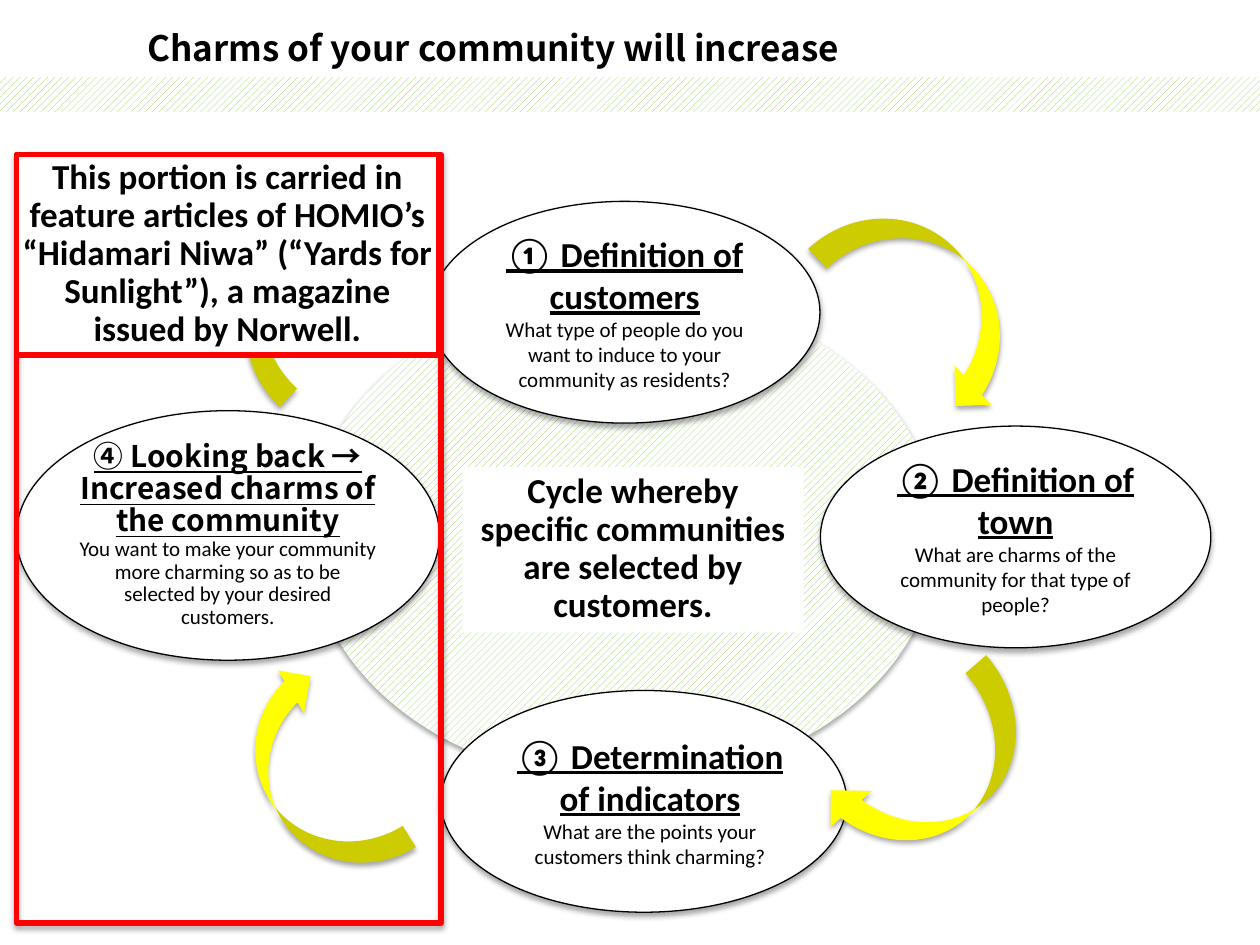
from collections import namedtuple

from lxml import etree
from pptx import Presentation
from pptx.dml.color import RGBColor
from pptx.enum.dml import MSO_PATTERN
from pptx.enum.shapes import MSO_SHAPE
from pptx.enum.text import MSO_ANCHOR, MSO_AUTO_SIZE, PP_ALIGN
from pptx.oxml.ns import qn
from pptx.util import Cm, Pt

ELLIPSE, RECTANGLE = MSO_SHAPE.OVAL, MSO_SHAPE.RECTANGLE
CURVED_ARROW = MSO_SHAPE.CURVED_DOWN_ARROW
DIAGONAL = MSO_PATTERN.WIDE_UPWARD_DIAGONAL
TOP, MIDDLE = MSO_ANCHOR.TOP, MSO_ANCHOR.MIDDLE
LEFT, CENTER = PP_ALIGN.LEFT, PP_ALIGN.CENTER
GROW = MSO_AUTO_SIZE.SHAPE_TO_FIT_TEXT
TITLE_ONLY = 5

LATIN, JAPANESE = "Calibri", "Noto Sans CJK JP"
BLACK, WHITE, RED, YELLOW, GREEN = "000000", "FFFFFF", "FF0000", "FFFF00", "92D050"

Box = namedtuple("Box", "left top width height")
Step = namedtuple("Step", "box heading body font size spacing inset")

# Boxes of the steps and arrows are relative to the cycle, in centimetres.
STEPS = [
    Step(Box(8.89, 9.86, 8.18, 4.47), "③ Determination of indicators",
         "What are the points your customers think charming?",
         LATIN, 20, 1, 0.25),
    Step(Box(0.33, 4.22, 8.53, 5.03),
         "④ Looking back → Increased charms of the community",
         "You want to make your community more charming so as to be "
         "selected by your desired customers.",
         JAPANESE, 17, 0.9, 0),
    Step(Box(16.54, 4.53, 7.87, 4.47), "② Definition of town",
         "What are charms of the community for that type of people?",
         LATIN, 20, 1, 0),
    Step(Box(8.66, 0, 7.87, 4.47), "① Definition of customers",
         "What type of people do you want to induce to your community as residents?",
         LATIN, 20, 1, 0),
]
ARROWS = [
    (Box(4.19, 0.82, 4.45, 2.01), 312.6),
    (Box(16.31, 0.92, 4.88, 2.16), 46.9),
    (Box(16.48, 10.42, 4.7, 2.21), 139),
    (Box(4.06, 10.6, 4.55, 2.01), 238.4),
]


def color(hex_string):
    return RGBColor.from_string(hex_string)


def inside(outer, box):
    """Shift a box from the coordinates of its region to those of the page."""
    return Box(outer.left + box.left, outer.top + box.top, box.width, box.height)


def add_shadow(shape):
    effects = etree.SubElement(shape._element.spPr, qn("a:effectLst"))
    shadow = etree.SubElement(effects, qn("a:outerShdw"), blurRad="40000",
                              dist="23000", dir="5400000", rotWithShape="0")
    tint = etree.SubElement(shadow, qn("a:srgbClr"), val=BLACK)
    etree.SubElement(tint, qn("a:alpha"), val="35000")


def add_figure(page, kind, box, fill=None, line=None, weight=0.75,
               hatched=False, shadowed=False):
    shape = page.shapes.add_shape(kind, *map(Cm, box))
    if hatched:
        shape.fill.patterned()
        shape.fill.pattern = DIAGONAL
        shape.fill.fore_color.rgb = color(GREEN)
        shape.fill.back_color.rgb = color(WHITE)
    elif fill:
        shape.fill.solid()
        shape.fill.fore_color.rgb = color(fill)
    else:
        shape.fill.background()
    if line:
        shape.line.color.rgb = color(line)
        shape.line.width = Pt(weight)
    else:
        shape.line.fill.background()
    if shadowed:
        add_shadow(shape)
    else:
        shape.shadow.inherit = False
    return shape


def set_frame(shape, anchor, margins=None, auto_size=None):
    """Wrap the text of a shape; margins are left, top, right, bottom in cm."""
    frame = shape.text_frame
    frame.word_wrap = True
    frame.vertical_anchor = anchor
    if auto_size is not None:
        frame.auto_size = auto_size
    if margins:
        (frame.margin_left, frame.margin_top,
         frame.margin_right, frame.margin_bottom) = map(Cm, margins)
    return frame


def write(para, text, size, font=LATIN, bold=True, underline=False,
          align=CENTER, spacing=1.0):
    para.alignment = align
    para.line_spacing = float(spacing)
    span = para.add_run()
    span.text = text
    span.font.size = Pt(size)
    span.font.name = font
    span.font.bold = bold
    span.font.underline = underline
    span.font.color.rgb = color(BLACK)
    # Circled numbers and arrows use the East Asian font.
    east_asian = etree.Element(qn("a:ea"), typeface=JAPANESE)
    span.font._element.find(qn("a:latin")).addnext(east_asian)


def add_header(page, box):
    title = page.shapes.title
    place = inside(box, Box(2.72, 0.41, 17.27, 1.12))
    title.left, title.top, title.width, title.height = map(Cm, place)
    title.fill.solid()
    title.fill.fore_color.rgb = color(WHITE)
    frame = set_frame(title, TOP, auto_size=GROW)
    write(frame.paragraphs[0], "Charms of your community will increase", 20,
          JAPANESE, align=LEFT)
    add_figure(page, RECTANGLE, inside(box, Box(0, 1.55, box.width, 0.71)),
               hatched=True)


def add_step(page, box, step):
    oval = add_figure(page, ELLIPSE, box, WHITE, BLACK, shadowed=True)
    frame = set_frame(oval, MIDDLE, (step.inset, 0, 0, 0))
    write(frame.paragraphs[0], step.heading, step.size, step.font,
          underline=True, spacing=step.spacing)
    write(frame.add_paragraph(), step.body, 12, bold=False, spacing=step.spacing)


def add_cycle(page, box):
    add_figure(page, ELLIPSE, inside(box, Box(6.22, 1.78, 12.7, 9.93)),
               hatched=True, shadowed=True)
    core = add_figure(page, RECTANGLE, inside(box, Box(9.32, 5.36, 6.88, 3.33)), WHITE)
    frame = set_frame(core, TOP, auto_size=GROW)
    write(frame.paragraphs[0],
          "Cycle whereby specific communities are selected by customers.",
          20, spacing=0.9)
    for step in STEPS:
        add_step(page, inside(box, step.box), step)
    for place, angle in ARROWS:
        arrow = add_figure(page, CURVED_ARROW, inside(box, place), YELLOW,
                           shadowed=True)
        arrow.rotation = angle


def add_highlight(page, box):
    """Frame the published portion, with a note at the top of the frame."""
    add_figure(page, RECTANGLE, box, line=RED, weight=3, shadowed=True)
    note = add_figure(page, RECTANGLE, inside(box, Box(0, 0, 8.51, 4.04)),
                      WHITE, RED, weight=3)
    frame = set_frame(note, TOP, (0.1, 0.1, 0.1, 0.1), GROW)
    write(frame.paragraphs[0],
          "This portion is carried in feature articles of HOMIO’s “Hidamari Niwa” "
          "(“Yards for Sunlight”), a magazine issued by Norwell.",
          20, spacing=0.9)


def main():
    deck = Presentation()
    deck.slide_width, deck.slide_height = Cm(25.4), Cm(19.05)
    page = deck.slides.add_slide(deck.slide_layouts[TITLE_ONLY])
    add_header(page, Box(0, 0, 25.4, 2.26))
    add_cycle(page, Box(0, 4.06, 25.4, 14.33))
    add_highlight(page, Box(0.33, 3.12, 8.56, 15.49))
    deck.save("out.pptx")


if __name__ == "__main__":
    main()
